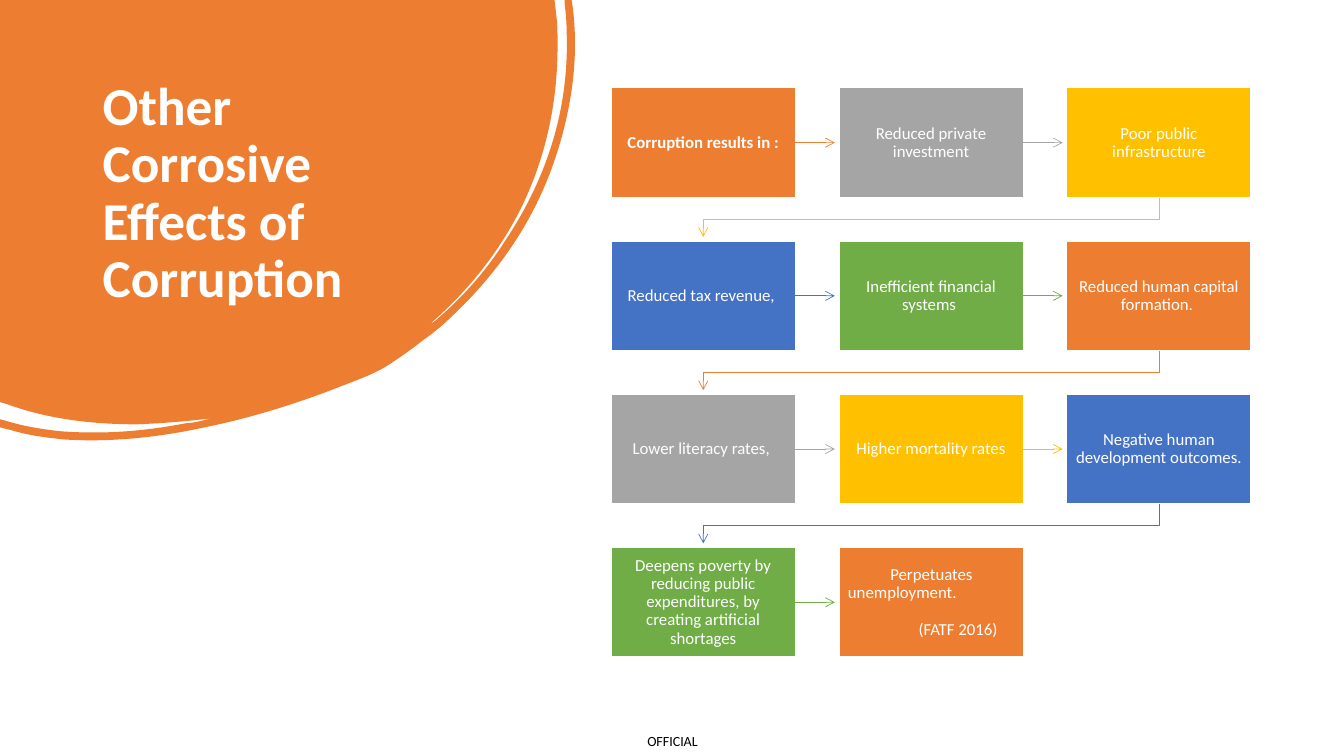
from itertools import cycle

from lxml.etree import SubElement
from pptx import Presentation
from pptx.dml.color import RGBColor
from pptx.enum.shapes import MSO_CONNECTOR, MSO_SHAPE
from pptx.enum.text import MSO_ANCHOR, PP_ALIGN
from pptx.oxml.ns import qn
from pptx.util import Inches, Pt

ORANGE, WHITE, BLACK = "ED7D31", "FFFFFF", "000000"
STEP_COLOURS = [ORANGE, "A5A5A5", "FFC000", "4472C4", "70AD47"]

COLUMNS = 3
GRID_LEFT, GRID_TOP = 6.06, 0.87
BOX_W, BOX_H = 1.83, 1.09
COLUMN_PITCH, ROW_PITCH = 2.26, 1.52
ARROW_GAP = 0.04

STEPS = [
    "Corruption results in :", "Reduced private investment", "Poor public infrastructure",
    "Reduced tax revenue, ", "Inefficient financial systems ", "Reduced human capital formation. ",
    "Lower literacy rates, ", "Higher mortality rates", "Negative human development outcomes. ",
    "Deepens poverty by reducing public expenditures, by creating artificial shortages",
]
LAST_STEP, CITATION = "Perpetuates unemployment.", "(FATF 2016)"

# Two numbers are a corner; six are two control points and the end of a curve.
SWOOSH = [
    (0, 0), (5.5, 0), (5.52, 0.17),
    (5.53, 0.26, 5.53, 0.36, 5.53, 0.45), (5.53, 1.01, 5.42, 1.54, 5.18, 2.04),
    (4.96, 2.49, 4.65, 2.88, 4.27, 3.21), (4.29, 3.21, 4.3, 3.19, 4.32, 3.18),
    (4.59, 2.95, 4.82, 2.69, 5.01, 2.39), (5.43, 1.76, 5.65, 1.07, 5.62, 0.3),
    (5.62, 0.21, 5.61, 0.12, 5.6, 0.03), (5.6, 0), (5.67, 0), (5.68, 0.07),
    (5.74, 0.54, 5.68, 1.02, 5.53, 1.5), (5.33, 2.14, 4.97, 2.68, 4.48, 3.14),
    (4.39, 3.23, 4.29, 3.31, 4.19, 3.38), (4.09, 3.46, 3.99, 3.53, 3.87, 3.61),
    (3.75, 3.69, 3.6, 3.75, 3.44, 3.81), (2.99, 3.99, 2.52, 4.14, 2.03, 4.24),
    (1.57, 4.34, 1.1, 4.39, 0.63, 4.36), (0.45, 4.34, 0.28, 4.32, 0.12, 4.27),
    (0, 4.24), (0, 4.16), (0.04, 4.17),
    (0.23, 4.23, 0.42, 4.26, 0.61, 4.28), (1.03, 4.31, 1.43, 4.28, 1.84, 4.2),
    (1.89, 4.2, 1.93, 4.19, 1.98, 4.18), (2.02, 4.17, 2.06, 4.16, 2.1, 4.15),
    (1.86, 4.18, 1.61, 4.2, 1.36, 4.21), (0.92, 4.21, 0.48, 4.16, 0.07, 4.01),
    (0, 3.99),
]


def colour(hex_string):
    return RGBColor.from_string(hex_string)


def add_outline(slide, points, close):
    start, *rest = [(Inches(x), Inches(y)) for x, y in points]
    builder = slide.shapes.build_freeform(*start)
    builder.add_line_segments(rest, close=close)
    outline = builder.convert_to_shape()
    outline.shadow.inherit = False
    return outline


def add_swoosh(slide):
    """Outline the segment ends, then bend the sides that are cubic curves."""
    swoosh = add_outline(slide, [segment[-2:] for segment in SWOOSH], close=True)
    sides = list(swoosh.element.iter(qn("a:lnTo")))
    for side, segment in zip(sides, SWOOSH[1:]):
        if len(segment) == 6:
            curve = SubElement(side.getparent(), qn("a:cubicBezTo"))
            for x, y in zip(segment[::2], segment[1::2]):
                SubElement(curve, qn("a:pt"), x=str(Inches(x)), y=str(Inches(y)))
            side.getparent().replace(side, curve)
    swoosh.fill.solid()
    swoosh.fill.fore_color.rgb = colour(ORANGE)
    swoosh.line.fill.background()


def add_text(frame, text, size, hex_string, bold=False, align=PP_ALIGN.CENTER,
             spacing=0.9, first=True):
    paragraph = frame.paragraphs[0] if first else frame.add_paragraph()
    paragraph.alignment = align
    paragraph.line_spacing = spacing
    run = paragraph.add_run()
    run.text = text
    run.font.name, run.font.size, run.font.bold = "Calibri", Pt(size), bold
    run.font.color.rgb = colour(hex_string)
    return paragraph


def indent(paragraph, **lengths):
    for name, inches in lengths.items():
        paragraph._p.get_or_add_pPr().set(name, str(Inches(inches)))


def set_insets(frame, inset):
    frame.margin_left = frame.margin_right = Inches(inset)
    frame.margin_top = frame.margin_bottom = Inches(inset)


def add_label(slide, area, text, size, hex_string, **style):
    frame = slide.shapes.add_textbox(*map(Inches, area)).text_frame
    frame.word_wrap = True
    add_text(frame, text, size, hex_string, **style)
    return frame


def add_step(slide, row, column, hex_string):
    box = slide.shapes.add_shape(
        MSO_SHAPE.RECTANGLE,
        Inches(GRID_LEFT + column * COLUMN_PITCH), Inches(GRID_TOP + row * ROW_PITCH),
        Inches(BOX_W), Inches(BOX_H))
    box.shadow.inherit = False
    box.fill.solid()
    box.fill.fore_color.rgb = colour(hex_string)
    box.line.color.rgb = colour(WHITE)
    box.line.width = Pt(1)
    frame = box.text_frame
    frame.word_wrap = True
    frame.vertical_anchor = MSO_ANCHOR.MIDDLE
    set_insets(frame, 0.09)
    return box


def style_arrow(arrow, hex_string):
    arrow.line.color.rgb = colour(hex_string)
    arrow.line.width = Pt(0.5)
    SubElement(arrow.element.spPr.find(qn("a:ln")), qn("a:tailEnd"), type="arrow")


def add_arrow_across(slide, box, hex_string):
    right, middle = box.left + box.width, box.top + box.height // 2
    tip = right + Inches(COLUMN_PITCH - BOX_W - ARROW_GAP)
    arrow = slide.shapes.add_connector(MSO_CONNECTOR.STRAIGHT, right, middle, tip, middle)
    arrow.begin_connect(box, 3)
    style_arrow(arrow, hex_string)
    SubElement(arrow.element.spPr, qn("a:effectLst"))


def add_arrow_to_next_row(slide, row, hex_string):
    first_x = GRID_LEFT + BOX_W / 2
    last_x = first_x + (COLUMNS - 1) * COLUMN_PITCH
    bottom = GRID_TOP + row * ROW_PITCH + BOX_H
    gap = ROW_PITCH - BOX_H
    turn = bottom + gap / 2
    arrow = add_outline(slide, [(last_x, bottom), (last_x, turn), (first_x, turn),
                                (first_x, bottom + gap - ARROW_GAP)], close=False)
    arrow.fill.background()
    style_arrow(arrow, hex_string)


def add_last_text(frame):
    effect = add_text(frame, LAST_STEP, 12, WHITE, align=PP_ALIGN.LEFT)
    indent(effect, marL=0, indent=0.42)
    citation = add_text(frame, CITATION, 12, WHITE, align=PP_ALIGN.LEFT, first=False)
    indent(citation, marL=0.7, indent=0)
    citation.space_before = Pt(13)


def add_flow(slide):
    for number, (text, hex_string) in enumerate(zip(STEPS + [LAST_STEP], cycle(STEP_COLOURS))):
        row, column = divmod(number, COLUMNS)
        box = add_step(slide, row, column, hex_string)
        if number == len(STEPS):
            add_last_text(box.text_frame)
            continue
        add_text(box.text_frame, text, 12, WHITE, bold=number == 0)
        if column < COLUMNS - 1:
            add_arrow_across(slide, box, hex_string)
        else:
            add_arrow_to_next_row(slide, row, hex_string)


def main():
    deck = Presentation()
    deck.slide_width, deck.slide_height = Inches(13.33), Inches(7.5)
    slide = deck.slides.add_slide(deck.slide_layouts[6])

    marking = add_label(slide, (6.27, 7.21, 0.8, 0.29), "OFFICIAL", 10, BLACK, spacing=1.0)
    marking.vertical_anchor = MSO_ANCHOR.MIDDLE
    set_insets(marking, 0)

    add_swoosh(slide)
    add_label(slide, (0.92, 0.74, 3.52, 2.22), "Other Corrosive Effects of Corruption",
              38, WHITE, bold=True, align=PP_ALIGN.LEFT)
    add_flow(slide)
    deck.save("out.pptx")


if __name__ == "__main__":
    main()
